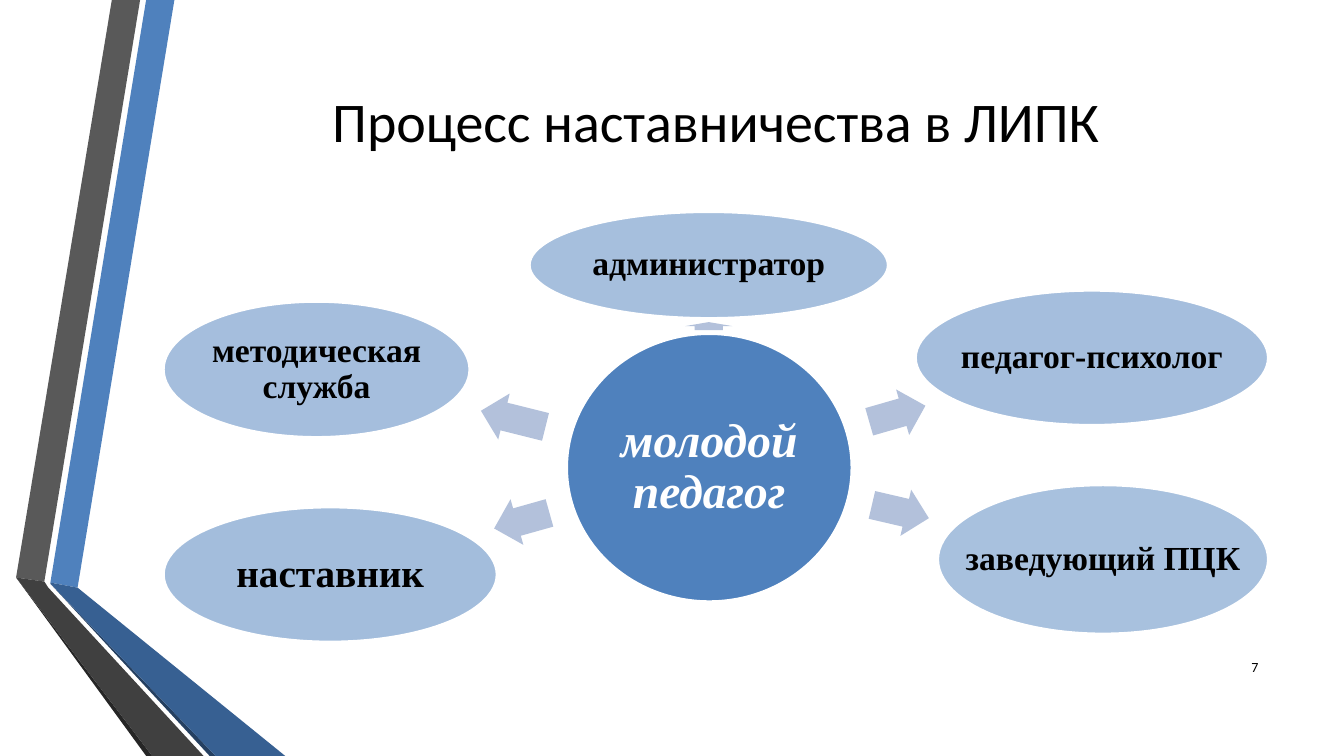
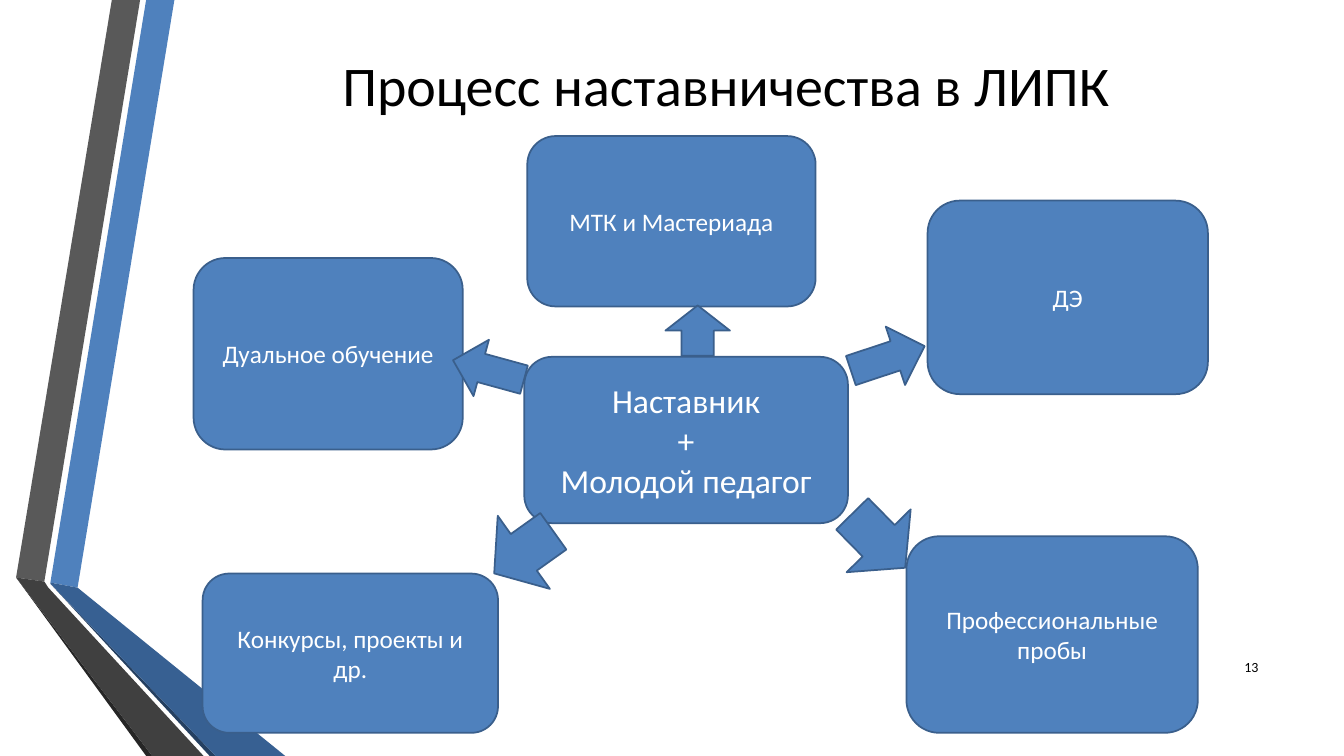
import pptx
import pptx.dml.color
import pptx.enum.shapes
import pptx.enum.text
import pptx.oxml
import pptx.oxml.ns
import pptx.util

Inches = pptx.util.Inches
Pt = pptx.util.Pt
RGB = pptx.dml.color.RGBColor
SHAPE = pptx.enum.shapes.MSO_SHAPE
ALIGN = pptx.enum.text.PP_ALIGN
MIDDLE = pptx.enum.text.MSO_ANCHOR.MIDDLE

BLUE = RGB(0x4F, 0x81, 0xBD)
BLUE_EDGE = RGB(0x3A, 0x5F, 0x8C)
BLUE_DARK = RGB(0x37, 0x60, 0x92)
BLUE_DEEP = RGB(0x25, 0x40, 0x61)
PALE_BLUE = RGB(0xB3, 0xC1, 0xDB)
GREY = RGB(0x59, 0x59, 0x59)
GREY_DARK = RGB(0x40, 0x40, 0x40)
GREY_DEEP = RGB(0x26, 0x26, 0x26)
WHITE = RGB(0xFF, 0xFF, 0xFF)
BLACK = RGB(0, 0, 0)

SANS = "Calibri"
SERIF = "Times New Roman"
TITLE = "Процесс наставничества в ЛИПК"

RIBBON = [
    (BLUE, [(0.5, 5.78), (0.77, 5.83), (1.73, 0), (1.45, 0)]),
    (GREY, [(1.39, 0), (1.11, 0), (0.16, 5.73), (0.44, 5.77)]),
    (GREY_DEEP, [(0.16, 5.73), (1.45, 7.5), (1.51, 7.5)]),
    (BLUE_DEEP, [(0.5, 5.79), (2.08, 7.5), (2.14, 7.5)]),
    (BLUE_DARK, [(0.5, 5.79), (2.14, 7.5), (2.83, 7.5), (0.77, 5.83), (0.5, 5.78)]),
    (GREY_DARK, [(2.02, 7.5), (0.48, 5.83), (0.44, 5.77), (0.16, 5.73), (1.51, 7.5)]),
]

MENTORS = [
    ("администратор", (5.25, 2.1, 3.56, 1.06), 24, 50, False),
    ("педагог-психолог", (9.08, 2.88, 3.5, 1.34), 24, 51, False),
    ("заведующий ПЦК", (9.3, 4.81, 3.28, 1.48), 24, 49, False),
    ("наставник", (1.62, 5.03, 3.31, 1.34), 28, 52, False),
    ("методическая служба", (1.62, 2.99, 3.04, 1.35), 24, 51, True),
]
MENTOR_ARROWS = [
    ((6.99, 3, 0.08, 0.47), 270),
    ((8.61, 3.87, 0.58, 0.47), 344),
    ((8.64, 4.84, 0.58, 0.47), 13.1),
    ((4.89, 4.93, 0.57, 0.47), 164.3),
    ((4.76, 3.92, 0.66, 0.47), 194),
]

ACTIVITIES = [
    (["МТК и Мастериада"], (5.23, 1.35, 2.86, 1.69), 18),
    (["Дуальное обучение"], (1.92, 2.56, 2.67, 1.9), 18),
    (["Наставник", "+", "Молодой педагог"], (5.2, 3.54, 3.21, 1.65), 24),
    (["ДЭ"], (9.2, 1.99, 2.78, 1.92), 18),
    (["Профессиональные пробы"], (8.99, 5.32, 2.89, 1.95), 18),
    (["Конкурсы, проекты и др."], (2.01, 5.69, 2.93, 1.58), 18),
]
ACTIVITY_ARROWS = [
    (SHAPE.RIGHT_ARROW, (8.42, 3.25, 0.77, 0.61), 341.7),
    (SHAPE.RIGHT_ARROW, (6.67, 2.96, 0.5, 0.64), 270),
    (SHAPE.RIGHT_ARROW, (4.48, 3.38, 0.73, 0.58), 195.3),
    (SHAPE.DOWN_ARROW, (4.75, 5.12, 0.89, 0.72), 54.5),
    (SHAPE.DOWN_ARROW, (8.27, 4.99, 0.89, 0.75), 315.5),
]


def box(place):
    return [Inches(length) for length in place]


def write(frame, lines, size, color, font=SANS, align=ALIGN.CENTER,
          bold=False, italic=False, wrap=True, spacing=None):
    frame.word_wrap = wrap
    frame.vertical_anchor = MIDDLE
    for index, line in enumerate(lines):
        paragraph = frame.add_paragraph() if index else frame.paragraphs[0]
        paragraph.alignment = align
        paragraph.line_spacing = spacing
        run = paragraph.add_run()
        run.text = line
        run.font.name = font
        run.font.size = Pt(size)
        run.font.bold = bold
        run.font.italic = italic
        run.font.color.rgb = color


def paint(shape, fill, edge=None, edge_width=1.25):
    shape.shadow.inherit = False
    shape.fill.solid()
    shape.fill.fore_color.rgb = fill
    if edge is None:
        shape.line.fill.background()
    else:
        shape.line.color.rgb = edge
        shape.line.width = Pt(edge_width)


def set_opacity(shape, percent):
    color = shape.element.spPr.find(pptx.oxml.ns.qn("a:solidFill"))[0]
    color.append(pptx.oxml.parse_xml(
        f'<a:alpha {pptx.oxml.ns.nsdecls("a")} val="{percent * 1000}"/>'))


def add_block(slide, kind, place, fill, edge=None, edge_width=1.25, rotation=0):
    block = slide.shapes.add_shape(kind, *box(place))
    paint(block, fill, edge, edge_width)
    block.rotation = rotation
    return block


def add_oval(slide, text, place, size, color, opacity=None, italic=False, wrap=True):
    oval = add_block(slide, SHAPE.OVAL, place, BLUE, WHITE, 2)
    if opacity:
        set_opacity(oval, opacity)
    frame = oval.text_frame
    frame.margin_left = frame.margin_right = 0
    frame.margin_top = frame.margin_bottom = 0
    write(frame, [text], size, color, SERIF, bold=True, italic=italic,
          wrap=wrap, spacing=0.9)


def add_ribbon(slide):
    for color, points in RIBBON:
        start, *others = [box(point) for point in points]
        outline = slide.shapes.build_freeform(*start)
        outline.add_line_segments(others, close=True)
        paint(outline.convert_to_shape(), color)


def add_base(deck, title_place, number):
    slide = deck.slides.add_slide(deck.slide_layouts[5])
    add_ribbon(slide)
    title = slide.shapes.title
    title.left, title.top, title.width, title.height = box(title_place)
    write(title.text_frame, [TITLE], 40, BLACK)
    page = slide.shapes.add_textbox(*box((11.98, 6.42, 0.6, 0.4)))
    write(page.text_frame, [number], 10, BLACK, align=ALIGN.RIGHT)
    return slide


def add_mentors_slide(deck):
    slide = add_base(deck, (1.62, 0.75, 10.96, 0.88), "7")
    add_oval(slide, "молодой педагог", (5.62, 3.31, 2.83, 2.66), 34, WHITE, italic=True)
    for place, rotation in MENTOR_ARROWS:
        arrow = add_block(slide, SHAPE.RIGHT_ARROW, place, PALE_BLUE, rotation=rotation)
        arrow.adjustments[0] = 0.6
    for text, place, size, opacity, wrap in MENTORS:
        add_oval(slide, text, place, size, BLACK, opacity, wrap=wrap)


def add_activities_slide(deck):
    slide = add_base(deck, (1.72, 0.2, 10.96, 1.26), "13")
    for lines, place, size in ACTIVITIES:
        card = add_block(slide, SHAPE.ROUNDED_RECTANGLE, place, BLUE, BLUE_EDGE)
        write(card.text_frame, lines, size, WHITE)
    for kind, place, rotation in ACTIVITY_ARROWS:
        add_block(slide, kind, place, BLUE, BLUE_EDGE, rotation=rotation)


def main():
    deck = pptx.Presentation()
    deck.slide_width, deck.slide_height = box((13.33, 7.5))
    add_mentors_slide(deck)
    add_activities_slide(deck)
    deck.save("out.pptx")


if __name__ == "__main__":
    main()
